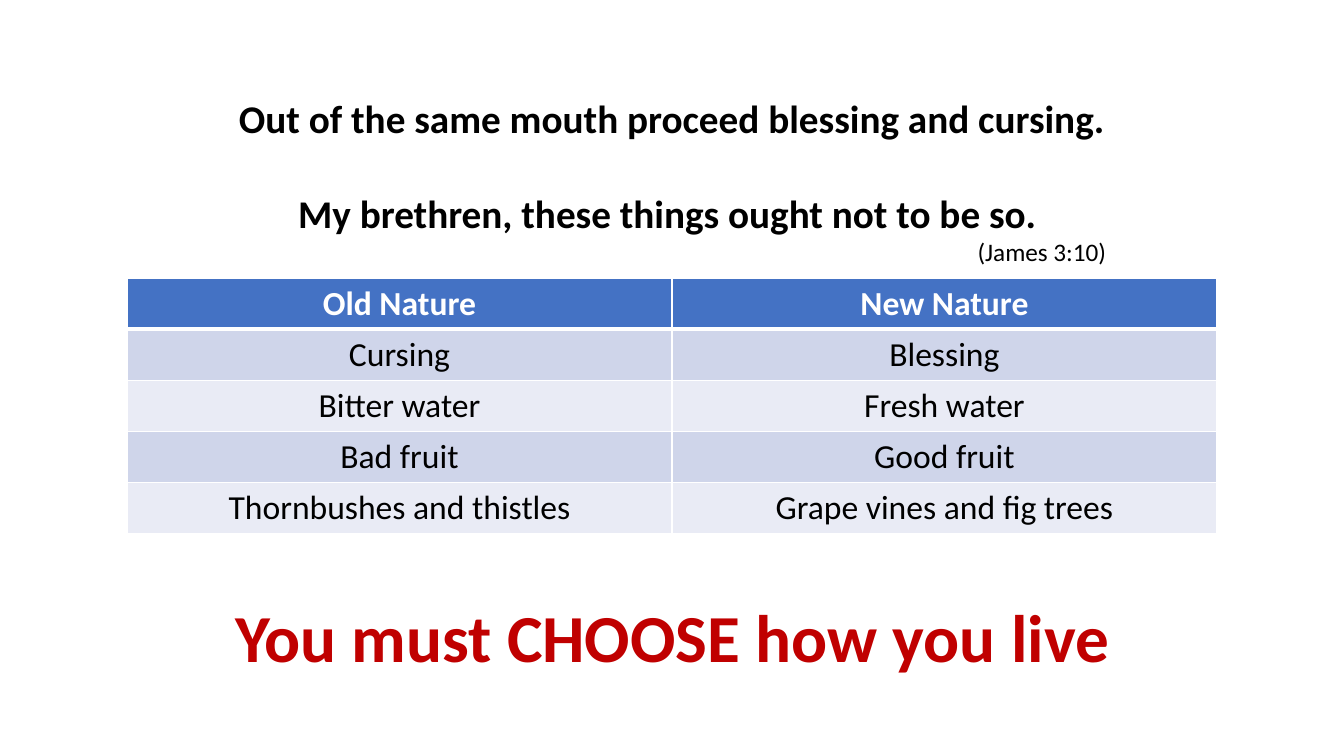
from lxml import etree
from pptx import Presentation
from pptx.dml.color import RGBColor
from pptx.enum.text import MSO_ANCHOR, PP_ALIGN
from pptx.oxml.ns import qn
from pptx.util import Inches, Pt

CENTER, RIGHT = PP_ALIGN.CENTER, PP_ALIGN.RIGHT
TOP = MSO_ANCHOR.TOP
BLACK, WHITE, RED = "000000", "FFFFFF", "C00000"
HEADER_BLUE = "4472C4"
BANDS = ("CFD5EA", "E9EBF5")


def color(hex_code):
    return RGBColor.from_string(hex_code)


class SlideWriter:
    """Adds text and tables in one style to a slide."""

    def __init__(self, slide, font="Calibri"):
        self.slide = slide
        self.font = font

    def style(self, paragraph, size, hex_code, bold, align):
        paragraph.alignment = align
        for run in paragraph.runs:
            run.font.name = self.font
            run.font.size = Pt(size)
            run.font.bold = bold
            run.font.color.rgb = color(hex_code)

    def text(self, left, top, width, height, lines):
        box = self.slide.shapes.add_textbox(
            Inches(left), Inches(top), Inches(width), Inches(height))
        frame = box.text_frame
        frame.word_wrap = True
        frame.vertical_anchor = TOP
        frame.text = "\n".join(line[0] for line in lines)
        for paragraph, (_, size, hex_code, bold, align, gap) in zip(frame.paragraphs, lines):
            self.style(paragraph, size, hex_code, bold, align)
            paragraph.space_before = Pt(gap)

    def borders(self, cell, widths):
        properties = cell._tc.get_or_add_tcPr()
        for position, (side, width) in enumerate(widths.items()):
            line = etree.Element(qn(f"a:{side}"), w=str(Pt(width)))
            fill = etree.SubElement(line, qn("a:solidFill"))
            etree.SubElement(fill, qn("a:srgbClr"), val=WHITE)
            properties.insert(position, line)

    def table(self, left, top, width, row_height, rows):
        table = self.slide.shapes.add_table(
            len(rows), len(rows[0]), Inches(left), Inches(top),
            Inches(width), Inches(row_height * len(rows))).table
        for r, row in enumerate(rows):
            header = r == 0
            for c, words in enumerate(row):
                cell = table.cell(r, c)
                cell.text_frame.text = words
                self.style(cell.text_frame.paragraphs[0], 24,
                           WHITE if header else BLACK, header, CENTER)
                cell.fill.solid()
                cell.fill.fore_color.rgb = color(HEADER_BLUE if header else BANDS[(r - 1) % 2])
                self.borders(cell, {"lnL": 1, "lnR": 1,
                                    "lnT": 3 if r == 1 else 1,
                                    "lnB": 3 if header else 1})


def main():
    presentation = Presentation()
    presentation.slide_width = Inches(13.33)
    presentation.slide_height = Inches(7.5)
    writer = SlideWriter(presentation.slides.add_slide(presentation.slide_layouts[6]))

    natures = [
        ("Old Nature", "New Nature"),
        ("Cursing", "Blessing"),
        ("Bitter water", "Fresh water"),
        ("Bad fruit", "Good fruit"),
        ("Thornbushes and thistles", "Grape vines and fig trees"),
    ]
    writer.table(1.26, 2.76, 10.81, 0.5, natures)

    verse = [
        ("Out of the same mouth proceed blessing and cursing.", 28, BLACK, True, CENTER, 0),
        ("My brethren, these things ought not to be so. ", 28, BLACK, True, CENTER, 34),
        ("(James 3:10)", 18, BLACK, False, RIGHT, 0),
    ]
    writer.text(2.25, 0.89, 8.82, 1.35, verse)

    choice = [("You must CHOOSE how you live", 48, RED, True, CENTER, 0)]
    writer.text(1.95, 5.86, 9.44, 0.91, choice)

    presentation.save("out.pptx")


if __name__ == "__main__":
    main()
